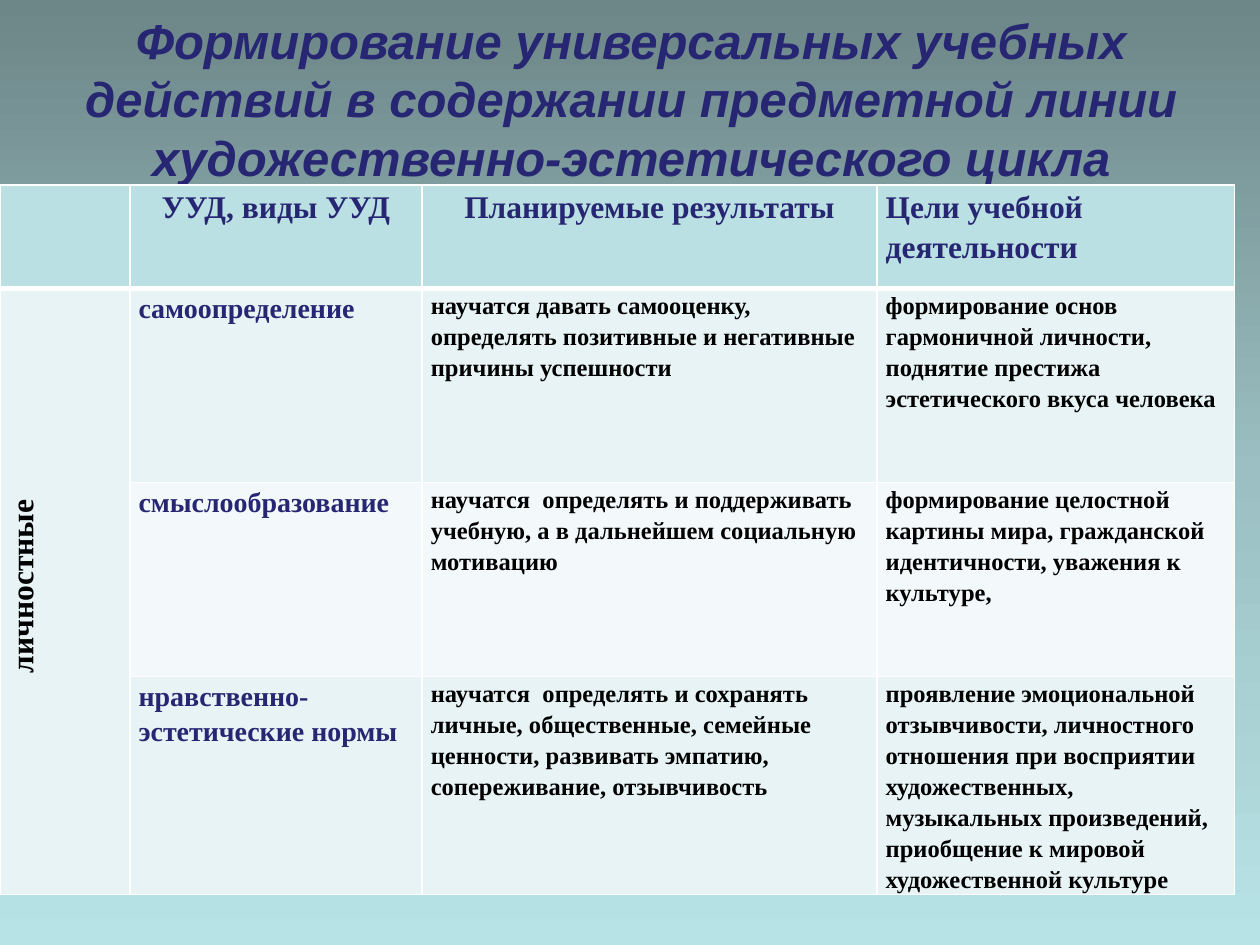
"""Build the slide on learning actions in the arts subjects."""
from copy import deepcopy
from typing import NamedTuple

from lxml.etree import SubElement
from pptx import Presentation
from pptx.dml.color import RGBColor
from pptx.enum.text import MSO_ANCHOR, PP_ALIGN
from pptx.oxml.ns import qn
from pptx.util import Inches, Pt

COLORS = {
    "navy": "262673", "black": "000000", "white": "FFFFFF",
    "header": "BBE0E3", "odd": "E7F3F4", "even": "F3F9FA",
    "sky_top": "6D8688", "sky_middle": "9BBFC2", "sky_bottom": "B8E3E6",
}
TITLE_LINES = [
    "Формирование универсальных учебных действий в содержании предметной линии",
    "художественно-эстетического цикла",
]
COLUMN_WIDTHS = [1.03, 2.32, 3.61, 2.84]
ROW_HEIGHTS = [0.82, 1.54, 1.54, 1.54]


class Style(NamedTuple):
    size: int
    color: str
    align: PP_ALIGN = PP_ALIGN.LEFT


HEADING = Style(18, "navy")
CENTERED_HEADING = Style(18, "navy", PP_ALIGN.CENTER)
GROUP = Style(18, "black", PP_ALIGN.CENTER)
ACTION = Style(16, "navy")
DETAIL = Style(14, "black")


class Action(NamedTuple):
    name: str
    results: str
    goals: str


HEADINGS = [
    ("УУД, виды УУД", CENTERED_HEADING),
    ("Планируемые результаты", CENTERED_HEADING),
    ("Цели учебной деятельности", HEADING),
]
ACTIONS = [
    Action("самоопределение",
           "научатся давать самооценку, определять позитивные и негативные причины успешности",
           "формирование основ гармоничной личности, поднятие престижа эстетического вкуса человека"),
    Action("смыслообразование",
           "научатся  определять и поддерживать учебную, а в дальнейшем социальную мотивацию",
           "формирование целостной картины мира, гражданской идентичности, уважения к культуре,"),
    Action("нравственно-эстетические нормы",
           "научатся  определять и сохранять личные, общественные, семейные ценности, "
           "развивать эмпатию, сопереживание, отзывчивость",
           "проявление эмоциональной отзывчивости, личностного отношения при восприятии "
           "художественных, музыкальных произведений, приобщение к мировой художественной культуре"),
]


def rgb(name: str) -> RGBColor:
    return RGBColor.from_string(COLORS[name])


def add_run(paragraph, text: str, font_name: str, size: int, color: str):
    run = paragraph.add_run()
    run.text = text
    run.font.name = font_name
    run.font.size = Pt(size)
    run.font.bold = True
    run.font.color.rgb = rgb(color)
    return run


def paint_background(slide) -> None:
    fill = slide.background.fill
    fill.gradient()
    fill.gradient_angle = 270
    first_stop = next(slide.element.iter(qn("a:gs")))
    first_stop.addnext(deepcopy(first_stop))
    shades = [(0, "sky_top"), (0.5, "sky_middle"), (1, "sky_bottom")]
    for stop, (position, shade) in zip(fill.gradient_stops, shades):
        stop.position = position
        stop.color.rgb = rgb(shade)


def write_title(slide) -> None:
    title = slide.shapes.title
    title.left, title.top = Inches(0.51), Inches(0.36)
    title.width, title.height = Inches(9), Inches(1.25)
    frame = title.text_frame
    frame.word_wrap = True
    frame.vertical_anchor = MSO_ANCHOR.MIDDLE
    frame.margin_bottom = Inches(0.46)
    paragraph = frame.paragraphs[0]
    paragraph.alignment = PP_ALIGN.CENTER
    paragraph.line_spacing = 1.0
    for index, line in enumerate(TITLE_LINES):
        if index:
            paragraph.add_line_break()
        add_run(paragraph, line, "Arial", 28, "navy").font.italic = True


def format_cell(cell, fill: str, top: int = 1, bottom: int = 1) -> None:
    properties = cell._tc.get_or_add_tcPr()
    for side, width in (("L", 1), ("R", 1), ("T", top), ("B", bottom)):
        border = SubElement(properties, qn(f"a:ln{side}"), w=str(Pt(width)))
        solid = SubElement(border, qn("a:solidFill"))
        SubElement(solid, qn("a:srgbClr"), val=COLORS["white"])
    cell.fill.solid()
    cell.fill.fore_color.rgb = rgb(fill)


def write_cell(cell, text: str, style: Style) -> None:
    cell.margin_left = cell.margin_right = Inches(0.07)
    cell.margin_top = cell.margin_bottom = 0
    paragraph = cell.text_frame.paragraphs[0]
    paragraph.alignment = style.align
    paragraph.line_spacing = 1.15
    add_run(paragraph, text, "Times New Roman", style.size, style.color)


def build_table(slide) -> None:
    table = slide.shapes.add_table(
        len(ROW_HEIGHTS), len(COLUMN_WIDTHS), Inches(0), Inches(1.47),
        Inches(sum(COLUMN_WIDTHS)), Inches(sum(ROW_HEIGHTS))).table
    for column, width in zip(table.columns, COLUMN_WIDTHS):
        column.width = Inches(width)
    for index, (row, height) in enumerate(zip(table.rows, ROW_HEIGHTS)):
        row.height = Inches(height)
        fill = "header" if index == 0 else "odd" if index % 2 else "even"
        for cell in row.cells:
            format_cell(cell, fill, top=3 if index == 1 else 1,
                        bottom=3 if index == 0 else 1)

    for column, (text, style) in enumerate(HEADINGS, start=1):
        write_cell(table.cell(0, column), text, style)
    for row, action in enumerate(ACTIONS, start=1):
        for column, (text, style) in enumerate(zip(action, (ACTION, DETAIL, DETAIL)), start=1):
            write_cell(table.cell(row, column), text, style)

    group = table.cell(1, 0)
    group.merge(table.cell(len(ACTIONS), 0))
    write_cell(group, "личностные", GROUP)
    group._tc.get_or_add_tcPr().set("vert", "vert270")
    group.text_frame.paragraphs[0]._p.get_or_add_pPr().set("marL", str(Inches(0.08)))


def main() -> None:
    presentation = Presentation()
    presentation.slide_width, presentation.slide_height = Inches(10), Inches(7.5)
    slide = presentation.slides.add_slide(presentation.slide_layouts.get_by_name("Title Only"))
    paint_background(slide)
    write_title(slide)
    build_table(slide)
    presentation.save("out.pptx")


if __name__ == "__main__":
    main()
